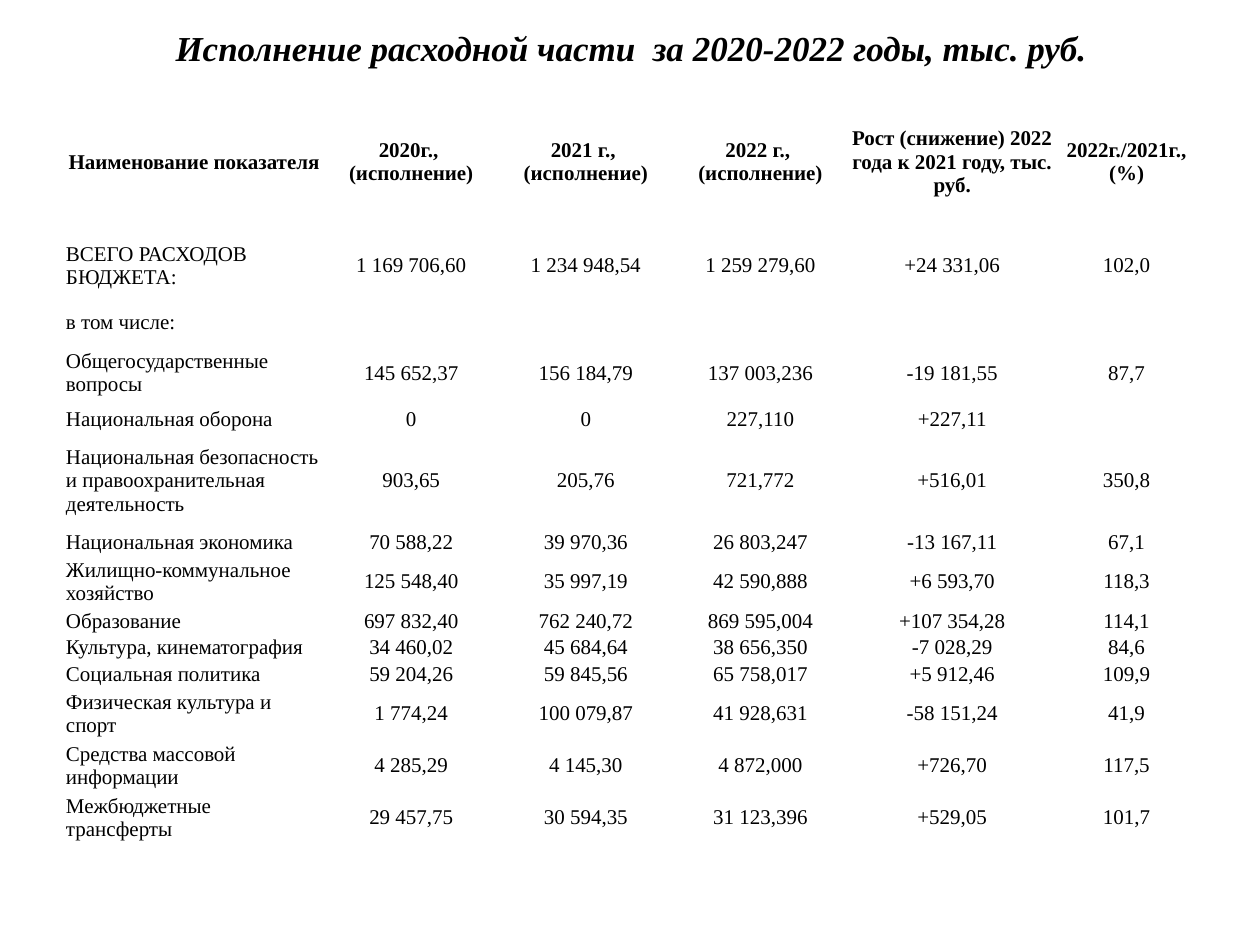
"""Build a one-page table of budget spending for 2020-2022."""
from lxml import etree
from pptx import Presentation
from pptx import util as u
from pptx.dml.color import RGBColor
from pptx.enum import text
from pptx.oxml import ns

BLACK = RGBColor(0, 0, 0)
WHITE = RGBColor(255, 255, 255)
FONT = "Times New Roman"
COLUMN_WIDTHS = [5.23, 3.52, 3.52, 3.52, 4.21, 2.82]
ROW_HEIGHTS = [2.64, 1.55, 0.73, 1.32, 0.51, 1.94, 0.51, 0.99, 0.51, 0.51, 0.51, 0.99, 0.99, 0.99]
ROWS = [
    ["Наименование показателя", "2020г.,  (исполнение)", "2021 г.,  (исполнение)",
     "2022 г.,  (исполнение)", "Рост (снижение) 2022 года к 2021 году, тыс. руб.", "2022г./2021г., (%)"],
    ["ВСЕГО РАСХОДОВ БЮДЖЕТА:", "1 169 706,60", "1 234 948,54", "1 259 279,60", "+24 331,06", "102,0"],
    ["в том числе:", "", "", "", "", ""],
    ["Общегосударственные вопросы", "145 652,37", "156 184,79", "137 003,236", "-19 181,55", "87,7"],
    ["Национальная оборона", "0", "0", "227,110", "+227,11", ""],
    ["Национальная безопасность и правоохранительная деятельность",
     "903,65", "205,76", "721,772", "+516,01", "350,8"],
    ["Национальная экономика", "70 588,22", "39 970,36", "26 803,247", "-13 167,11", "67,1"],
    ["Жилищно-коммунальное хозяйство", "125 548,40", "35 997,19", "42 590,888", "+6 593,70", "118,3"],
    ["Образование", "697 832,40", "762 240,72", "869 595,004", "+107 354,28", "114,1"],
    ["Культура, кинематография", "34 460,02", "45 684,64", "38 656,350", "-7 028,29", "84,6"],
    ["Социальная политика", "59 204,26", "59 845,56", "65 758,017", "+5 912,46", "109,9"],
    ["Физическая культура и спорт", "1 774,24", "100 079,87", "41 928,631", "-58 151,24", "41,9"],
    ["Средства массовой информации", "4 285,29", "4 145,30", "4 872,000", "+726,70", "117,5"],
    ["Межбюджетные трансферты", "29 457,75", "30 594,35", "31 123,396", "+529,05", "101,7"],
]


def style(paragraph, size, bold, italic, align):
    paragraph.alignment = align
    font = paragraph.font
    font.name, font.size, font.bold, font.italic = FONT, u.Pt(size), bold, italic
    font.color.rgb = BLACK


def add_border(cell, side, points):
    line = etree.SubElement(cell._tc.get_or_add_tcPr(), ns.qn(f"a:ln{side}"), w=str(u.Pt(points)))
    fill = etree.SubElement(line, ns.qn("a:solidFill"))
    etree.SubElement(fill, ns.qn("a:srgbClr"), val=str(WHITE))


deck = Presentation()
deck.slide_width, deck.slide_height = u.Cm(25.4), u.Cm(19.05)
page = deck.slides.add_slide(deck.slide_layouts[6])
page.background.fill.solid()
page.background.fill.fore_color.rgb = WHITE

title = page.shapes.add_textbox(u.Cm(0.05), u.Cm(0), u.Cm(25.35), u.Cm(1.93)).text_frame
title.word_wrap = True
title.vertical_anchor = text.MSO_ANCHOR.MIDDLE
title.text = "Исполнение расходной части  за 2020-2022 годы, тыс. руб."
style(title.paragraphs[0], 20, True, True, text.PP_ALIGN.CENTER)

table = page.shapes.add_table(
    len(ROWS), len(COLUMN_WIDTHS), u.Cm(1.3), u.Cm(1.93),
    u.Cm(sum(COLUMN_WIDTHS)), u.Cm(sum(ROW_HEIGHTS))).table
table.horz_banding = False
for column, width in zip(table.columns, COLUMN_WIDTHS):
    column.width = u.Cm(width)
for row, height in zip(table.rows, ROW_HEIGHTS):
    row.height = u.Cm(height)

for row_index, values in enumerate(ROWS):
    header = row_index == 0
    for column_index, value in enumerate(values):
        cell = table.cell(row_index, column_index)
        cell.margin_left = cell.margin_right = cell.margin_top = u.Cm(0.03)
        cell.margin_bottom = u.Cm(0)
        cell.vertical_anchor = text.MSO_ANCHOR.MIDDLE
        for side in "LRTB":
            thick = (header and side == "B") or (row_index == 1 and side == "T")
            add_border(cell, side, 3 if thick else 1)
        cell.fill.background()
        paragraph = cell.text_frame.paragraphs[0]
        centred = header or column_index > 0
        style(paragraph, 12, header, False, text.PP_ALIGN.CENTER if centred else text.PP_ALIGN.LEFT)
        if value:
            paragraph.add_run().text = value
        else:
            etree.SubElement(paragraph._p, ns.qn("a:endParaRPr"), sz="1200")

deck.save("out.pptx")
